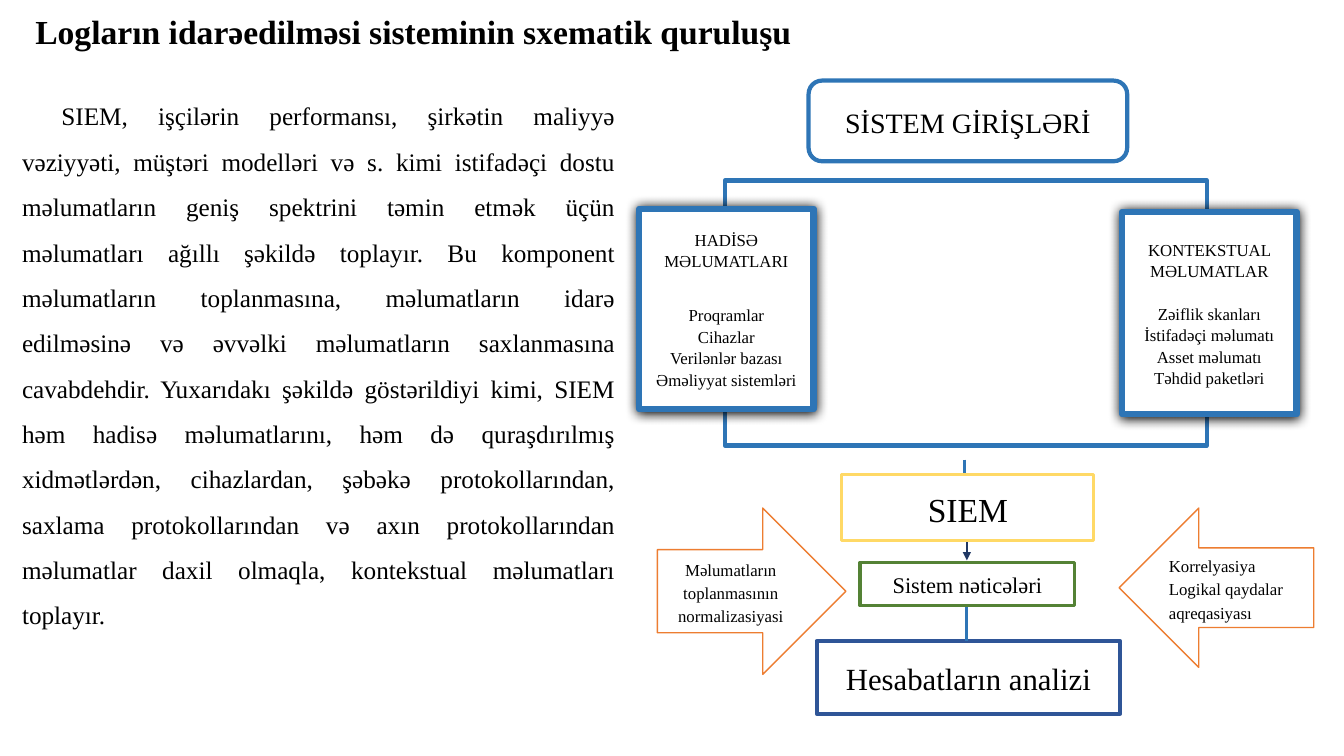
import pptx
import pptx.util
import pptx.dml.color
import pptx.oxml.ns
import lxml.etree
from pptx.enum.shapes import MSO_SHAPE, MSO_CONNECTOR
from pptx.enum.text import PP_ALIGN, MSO_ANCHOR, MSO_AUTO_SIZE

Inches = pptx.util.Inches
Pt = pptx.util.Pt
FONT = "Times New Roman"
BLUE = "2E75B6"
ORANGE = "ED7D31"
RECT = MSO_SHAPE.RECTANGLE

TITLE = "Logların idarəedilməsi sisteminin sxematik quruluşu"
BODY = (
    "SIEM, işçilərin performansı, şirkətin maliyyə vəziyyəti, müştəri modelləri və s. kimi "
    "istifadəçi dostu məlumatların geniş spektrini təmin etmək üçün məlumatları ağıllı şəkildə "
    "toplayır. Bu komponent məlumatların toplanmasına, məlumatların idarə edilməsinə və əvvəlki "
    "məlumatların saxlanmasına cavabdehdir. Yuxarıdakı şəkildə göstərildiyi kimi, SIEM həm hadisə "
    "məlumatlarını, həm də quraşdırılmış xidmətlərdən, cihazlardan, şəbəkə protokollarından, "
    "saxlama protokollarından və axın protokollarından məlumatlar daxil olmaqla, kontekstual "
    "məlumatları toplayır."
)
REPORT = (RECT, (8.1, 6.36, 3.01, 0.72), "2F5597", 3, 22, "Hesabatların analizi")
RESULT = (RECT, (8.53, 5.58, 2.13, 0.43), "548235", 2.25, 16, "Sistem nəticələri")
INPUT = (MSO_SHAPE.ROUNDED_RECTANGLE, (8.02, 0.8, 3.16, 0.8), BLUE, 3, 20, "SİSTEM GİRİŞLƏRİ")
SIEM = (RECT, (8.35, 4.71, 2.5, 0.65), "FFD966", 2.25, 24, "SIEM")
FRAME = (7.19, 1.79, 4.78, 2.63)
LINKS = [
    (9.59, 5.91, 6.36, BLUE, 2.25, False),
    (9.59, 5.31, 5.56, "203864", 1.5, True),
]
STUB = (9.57, 4.56, 4.76, BLUE, 2.25, False)
CARDS = [
    ((6.34, 2.07, 1.73, 1.99), "HADİSƏ MƏLUMATLARI", 23,
     ["Proqramlar", "Cihazlar", "Verilənlər bazası", "Əməliyyat sistemləri"]),
    ((11.13, 2.1, 1.73, 2.01), "KONTEKSTUAL MƏLUMATLAR", 15,
     ["Zəiflik skanları", "İstifadəçi məlumatı", "Asset məlumatı", "Təhdid paketləri"]),
]
ARROWS = [
    (MSO_SHAPE.LEFT_ARROW, (11.1, 5.04, 1.93, 1.58), PP_ALIGN.LEFT,
     ["Korrelyasiya", "Logikal qaydalar", "aqreqasiyası"]),
    (MSO_SHAPE.RIGHT_ARROW, (6.52, 5.04, 1.87, 1.65), PP_ALIGN.CENTER,
     ["Məlumatların", "toplanmasının", "normalizasiyasi"]),
]


def hue(code):
    return pptx.dml.color.RGBColor.from_string(code)


def place(item, box):
    item.left, item.top, item.width, item.height = map(Inches, box)


def node(home, tag, **attrs):
    sub = lxml.etree.SubElement(home, pptx.oxml.ns.qn("a:" + tag))
    for key, val in attrs.items():
        sub.set(key, str(val))
    return sub


def write(para, text, size, align=PP_ALIGN.CENTER, pitch=1.07, after=0, bold=False):
    para.alignment = align
    para.line_spacing = pitch
    para.space_before = Pt(0)
    para.space_after = Pt(after)
    for num, part in enumerate(text.split("\n")):
        if num:
            para.add_line_break()
        run = para.add_run()
        run.text = part
        run.font.name = FONT
        run.font.size = Pt(size)
        run.font.bold = bold
        run.font.color.rgb = hue("000000")


def draw(kind, box, color, width, fill="FFFFFF"):
    item = group.shapes.add_shape(kind, *map(Inches, box))
    if fill:
        item.fill.solid()
        item.fill.fore_color.rgb = hue(fill)
    else:
        item.fill.background()
    item.line.color.rgb = hue(color)
    item.line.width = Pt(width)
    item.shadow.inherit = False
    item.text_frame.word_wrap = True
    item.text_frame.vertical_anchor = MSO_ANCHOR.MIDDLE
    return item


def label(kind, box, color, width, size, text):
    item = draw(kind, box, color, width)
    write(item.text_frame.paragraphs[0], text, size, after=8)


def link(x, top, end, color, width, head):
    item = group.shapes.add_connector(
        MSO_CONNECTOR.STRAIGHT, Inches(x), Inches(top), Inches(x), Inches(end))
    item.line.color.rgb = hue(color)
    item.line.width = Pt(width)
    if head:
        node(item.line._get_or_add_ln(), "tailEnd", type="triangle")
    node(item._element.spPr, "effectLst")


def card(box, head, gap, rows):
    item = draw(RECT, box, BLUE, 4.5)
    glow = item._element.spPr.find(pptx.oxml.ns.qn("a:effectLst"))
    shade = node(glow, "outerShdw", blurRad=Pt(8.5), dist=Pt(1), dir=5400000,
                 algn="ctr", rotWithShape=0)
    node(shade, "srgbClr", val="000000")
    frame = item.text_frame
    write(frame.paragraphs[0], head, 12, after=gap)
    for row in rows:
        write(frame.add_paragraph(), row, 12)


deck = pptx.Presentation()
deck.slide_width = Inches(13.33)
deck.slide_height = Inches(7.5)
slide = deck.slides.add_slide(deck.slide_layouts[5])

title = slide.shapes.title
place(title, (0.25, 0.23, 7.91, 0.33))
title.text_frame.auto_size = MSO_AUTO_SIZE.NONE
title.text_frame.word_wrap = True
title.text_frame.vertical_anchor = MSO_ANCHOR.BOTTOM
write(title.text_frame.paragraphs[0], TITLE, 24, PP_ALIGN.LEFT, 0.9, bold=True)

group = slide.shapes.add_group_shape()
label(*REPORT)
for row in LINKS:
    link(*row)
label(*RESULT)
draw(RECT, FRAME, BLUE, 3, None)
for row in CARDS:
    card(*row)
link(*STUB)
label(*INPUT)
label(*SIEM)
for kind, box, align, rows in ARROWS:
    arrow = draw(kind, box, ORANGE, 1)
    write(arrow.text_frame.paragraphs[0], "\n".join(rows), 12, align, 1.15)

body = slide.shapes.add_textbox(*map(Inches, (0.12, 0.8, 6.08, 5.51)))
body.text_frame.word_wrap = True
para = body.text_frame.paragraphs[0]
write(para, BODY, 18, PP_ALIGN.JUSTIFY, 1.5)
para._p.get_or_add_pPr().set("indent", str(Inches(0.39)))

deck.save("out.pptx")
